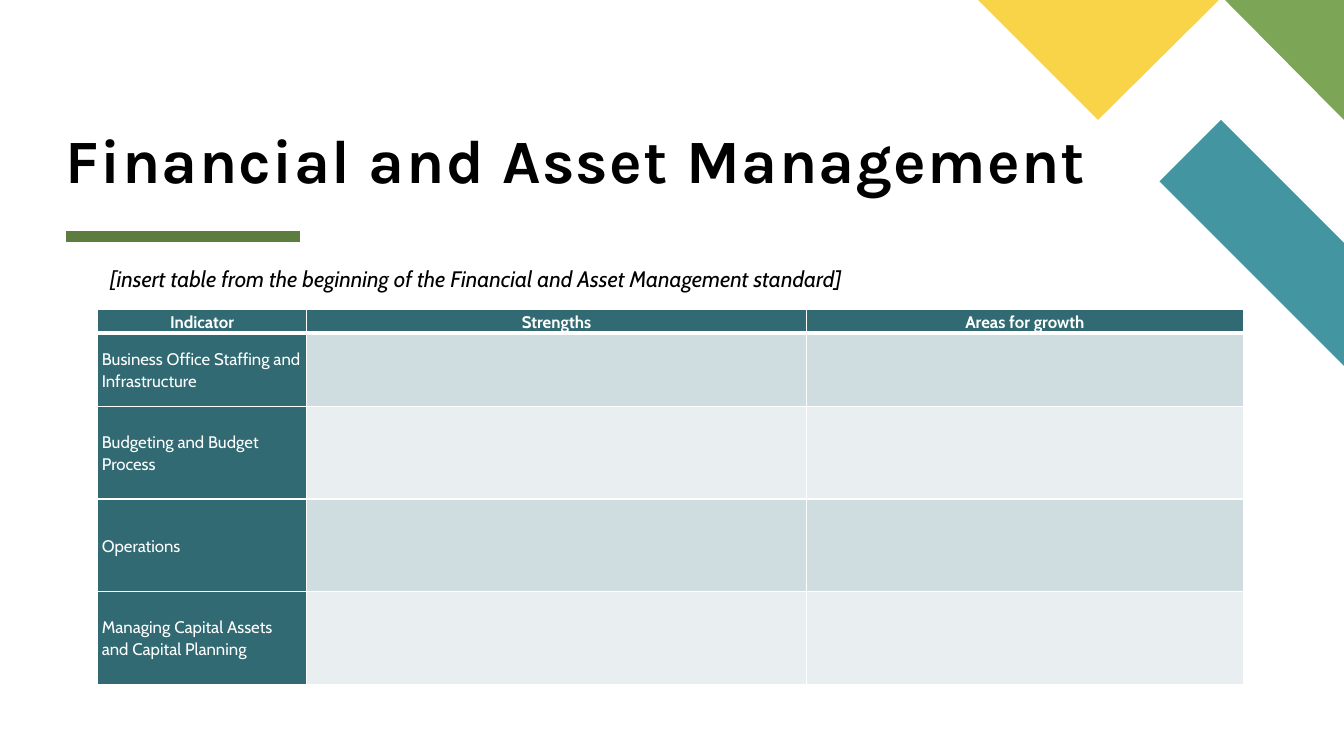
from typing import NamedTuple

from lxml import etree
from pptx import Presentation
from pptx.dml.color import RGBColor
from pptx.enum import shapes, text
from pptx.oxml import ns
from pptx.util import Inches, Pt

WHITE, BLACK, TEAL = "FFFFFF", "000000", "316A73"
BANDS = ("CFDDE0", "E9EFF0")


class Corner(NamedTuple):
    points: tuple[tuple[float, float], ...]
    color: str


class Row(NamedTuple):
    labels: tuple[str, ...]
    height: float


CORNERS = (
    Corner(((13.33, 3.63), (13.33, 2.41), (12.11, 1.19), (11.5, 1.8)), "4495A2"),
    Corner(((13.33, 1.19), (13.33, 0), (12.15, 0)), "7CA655"),
    Corner(((9.7, 0), (10.89, 1.19), (12.09, 0)), "F9D448"),
)
COLUMN_WIDTHS = (2.07, 4.96, 4.33)
ROWS = (
    Row(("Indicator", "Strengths", "Areas for growth"), 0.2),
    Row(("Business Office Staffing and Infrastructure",), 0.73),
    Row(("Budgeting and Budget Process",), 0.92),
    Row(("Operations",), 0.92),
    Row(("Managing Capital Assets and Capital Planning",), 0.92),
)


def rgb(color: str) -> RGBColor:
    return RGBColor.from_string(color)


def paint(target, color: str) -> None:
    target.fill.solid()
    target.fill.fore_color.rgb = rgb(color)


def set_margins(target, left: float, top: float, right: float, bottom: float) -> None:
    target.margin_left, target.margin_top = Inches(left), Inches(top)
    target.margin_right, target.margin_bottom = Inches(right), Inches(bottom)


def write(frame, words: str, *, size: float, font: str = "Cabin", color: str = BLACK,
          bold: bool = False, italic: bool = False, align=text.PP_ALIGN.LEFT,
          line: float = 1.0, before: float = 0, after: float = 0, tracking: float = 0) -> None:
    para = frame.paragraphs[0]
    para.alignment, para.line_spacing = align, line
    para.space_before, para.space_after = Pt(before), Pt(after)
    span = para.add_run()
    span.text = words
    span.font.name, span.font.size = font, Pt(size)
    span.font.bold, span.font.italic = bold, italic
    span.font.color.rgb = rgb(color)
    if tracking:
        span.font._element.set("spc", str(round(tracking * 100)))


def draw_corner(page, corner: Corner) -> None:
    points = [(Inches(x), Inches(y)) for x, y in corner.points]
    builder = page.shapes.build_freeform(*points[0])
    builder.add_line_segments(points[1:], close=True)
    shape = builder.convert_to_shape()
    paint(shape, corner.color)
    shape.line.fill.background()
    shape.shadow.inherit = False


def draw_rule(page) -> None:
    rule = page.shapes.add_connector(
        shapes.MSO_CONNECTOR.STRAIGHT, Inches(0.65), Inches(2.35), Inches(2.98), Inches(2.35))
    rule.line.color.rgb = rgb("5D7D40")
    rule.line.width = Pt(8)
    etree.SubElement(rule._element.spPr, ns.qn("a:effectLst"))


def add_borders(cell, bottom: float) -> None:
    properties = cell._tc.get_or_add_tcPr()
    for side, width in (("L", 1), ("R", 1), ("T", 1), ("B", bottom)):
        edge = etree.SubElement(properties, ns.qn(f"a:ln{side}"), w=str(Pt(width)))
        fill = etree.SubElement(edge, ns.qn("a:solidFill"))
        etree.SubElement(fill, ns.qn("a:srgbClr"), val=WHITE)


def draw_title(page) -> None:
    title = page.shapes.title
    title.left, title.top = Inches(0.65), Inches(0.22)
    title.width, title.height = Inches(12), Inches(1.72)
    frame = title.text_frame
    frame.vertical_anchor = text.MSO_ANCHOR.BOTTOM
    frame.auto_size = text.MSO_AUTO_SIZE.NONE
    set_margins(frame, 0, 0, 0, 0)
    write(frame, "Financial and Asset Management", size=44, font="Karla", bold=True,
          line=0.8, tracking=1)


def draw_prompt(page) -> None:
    box = page.shapes.add_textbox(Inches(0.65), Inches(2.58), Inches(12), Inches(0.8))
    box.text_frame.word_wrap = True
    set_margins(box.text_frame, 0.44, 0.05, 0.1, 0.05)
    write(box.text_frame,
          "[insert table from the beginning of the Financial and Asset Management standard]",
          size=16, italic=True, before=6)


def draw_table(page) -> None:
    table = page.shapes.add_table(
        len(ROWS), len(COLUMN_WIDTHS), Inches(0.97), Inches(3.07),
        Inches(sum(COLUMN_WIDTHS)), Inches(sum(row.height for row in ROWS))).table
    for column, width in zip(table.columns, COLUMN_WIDTHS):
        column.width = Inches(width)
    for r, row in enumerate(ROWS):
        table.rows[r].height = Inches(row.height)
        header = r == 0
        for c, cell in enumerate(table.rows[r].cells):
            add_borders(cell, bottom=3 if header else 1)
            paint(cell, TEAL if header or c == 0 else BANDS[(r - 1) % 2])
            if c >= len(row.labels):
                continue
            set_margins(cell, 0.04, 0, 0.04, 0)
            cell.vertical_anchor = text.MSO_ANCHOR.TOP if header else text.MSO_ANCHOR.MIDDLE
            write(cell.text_frame, row.labels[c], size=12, color=WHITE, bold=header,
                  align=text.PP_ALIGN.CENTER if header else text.PP_ALIGN.LEFT,
                  line=1.15 if header else 1.07, before=2, after=2)


def main() -> None:
    deck = Presentation()
    deck.slide_width, deck.slide_height = Inches(13.33), Inches(7.5)
    page = deck.slides.add_slide(deck.slide_layouts.get_by_name("Title Only"))
    paint(page.background, WHITE)
    for corner in CORNERS:
        draw_corner(page, corner)
    draw_rule(page)
    draw_title(page)
    draw_prompt(page)
    draw_table(page)
    deck.save("out.pptx")


if __name__ == "__main__":
    main()
